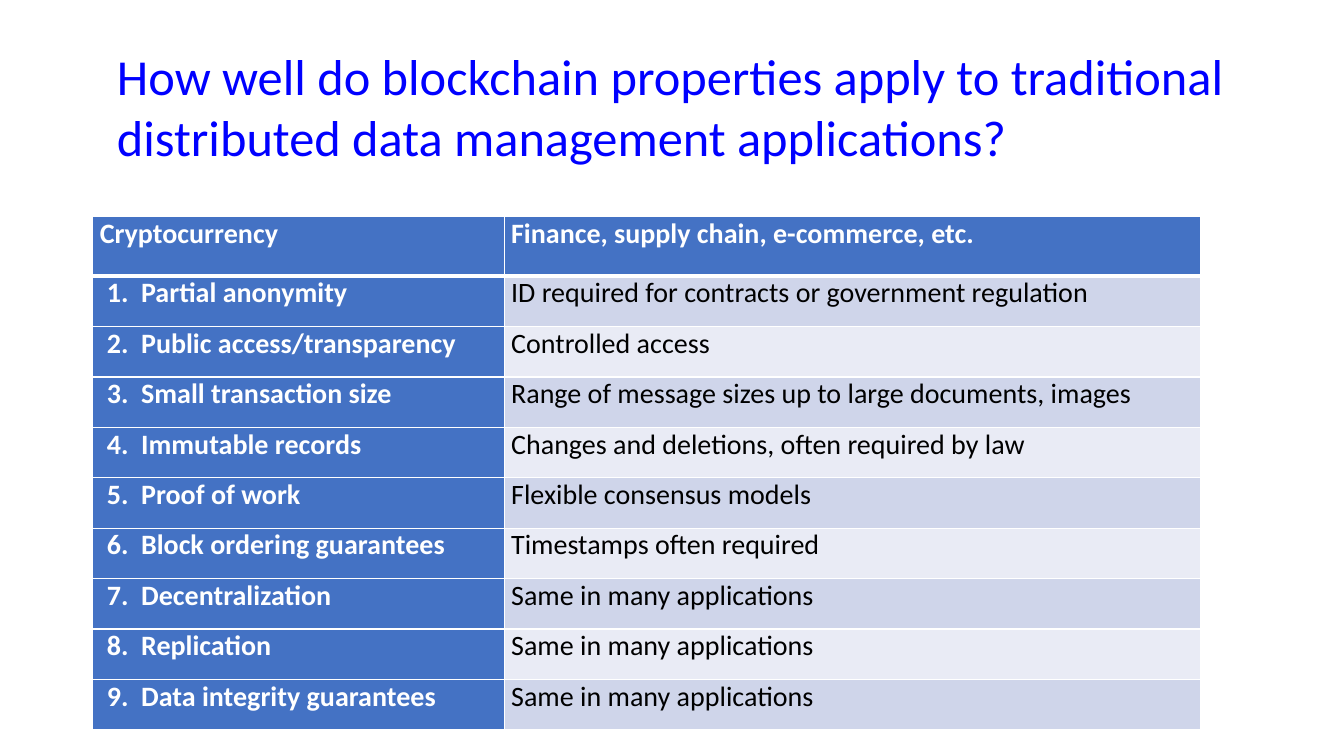
"""Build a slide comparing cryptocurrency properties with traditional applications."""
from lxml import etree
from pptx import Presentation
from pptx.dml.color import RGBColor
from pptx.enum import text
from pptx.oxml import ns
from pptx.util import Inches, Pt

TITLE_BLUE = RGBColor(0x00, 0x00, 0xFF)
HEADER_BLUE = RGBColor(0x44, 0x72, 0xC4)
BAND_DARK = RGBColor(0xCF, 0xD5, 0xEA)
BAND_LIGHT = RGBColor(0xE9, 0xEB, 0xF5)
WHITE = RGBColor(0xFF, 0xFF, 0xFF)
BLACK = RGBColor(0x00, 0x00, 0x00)

ROWS = [
    ("Cryptocurrency", "Finance, supply chain, e-commerce, etc."),
    ("Partial anonymity", "ID required for contracts or government regulation"),
    ("Public access/transparency", "Controlled access"),
    ("Small transaction size", "Range of message sizes up to large documents, images"),
    ("Immutable records", "Changes and deletions, often required by law"),
    ("Proof of work", "Flexible consensus models"),
    ("Block ordering guarantees", "Timestamps often required"),
    ("Decentralization", "Same in many applications"),
    ("Replication", "Same in many applications"),
    ("Data integrity guarantees", "Same in many applications"),
]


def add_border(cell, side, width):
    line = etree.SubElement(cell._tc.get_or_add_tcPr(), ns.qn(f"a:ln{side}"), w=str(Pt(width)))
    fill = etree.SubElement(line, ns.qn("a:solidFill"))
    etree.SubElement(fill, ns.qn("a:srgbClr"), val=str(WHITE))


def number_paragraph(para, number):
    properties = para._p.get_or_add_pPr()
    properties.set("marL", str(Inches(0.41)))
    properties.set("indent", str(Inches(-0.34)))
    numbering = etree.Element(ns.qn("a:buAutoNum"), type="arabicPeriod", startAt=str(number))
    properties.insert(0, numbering)


deck = Presentation()
deck.slide_width, deck.slide_height = Inches(13.33), Inches(7.5)
page = deck.slides.add_slide(deck.slide_layouts[5])

title = page.shapes.title
title.left, title.top = Inches(1.06), Inches(0.4)
title.width, title.height = Inches(11.68), Inches(1.31)
title.text = "How well do blockchain properties apply to traditional distributed data management applications?"
title.text_frame.word_wrap = True
title.text_frame.auto_size = text.MSO_AUTO_SIZE.NONE
title.text_frame.vertical_anchor = text.MSO_ANCHOR.TOP
heading = title.text_frame.paragraphs[0]
heading.alignment = text.PP_ALIGN.LEFT
heading.font.name, heading.font.size = "Calibri", Pt(36)
heading.font.color.rgb = TITLE_BLUE

table = page.shapes.add_table(
    len(ROWS), 2, Inches(0.92), Inches(2.15), Inches(10.99), Inches(5.09)).table
table.first_col = True
table.columns[0].width, table.columns[1].width = Inches(4.08), Inches(6.91)

for row, labels in enumerate(ROWS):
    table.rows[row].height = Inches(0.5 if row else 0.59)
    for column, label in enumerate(labels):
        is_header = row == 0 or column == 0
        cell = table.cell(row, column)
        cell.text = label
        cell.margin_left = cell.margin_right = Inches(0.07)
        cell.margin_top = cell.margin_bottom = 0
        for side in "LRTB":
            on_header_edge = (row, side) in ((0, "B"), (1, "T"))
            add_border(cell, side, 3 if on_header_edge else 1)
        cell.fill.solid()
        band = BAND_DARK if row % 2 else BAND_LIGHT
        cell.fill.fore_color.rgb = HEADER_BLUE if is_header else band
        para = cell.text_frame.paragraphs[0]
        para.font.name, para.font.size = "Calibri", Pt(20)
        para.font.bold = is_header
        para.font.color.rgb = WHITE if is_header else BLACK
        if row and column == 0:
            number_paragraph(para, row)

deck.save("out.pptx")
